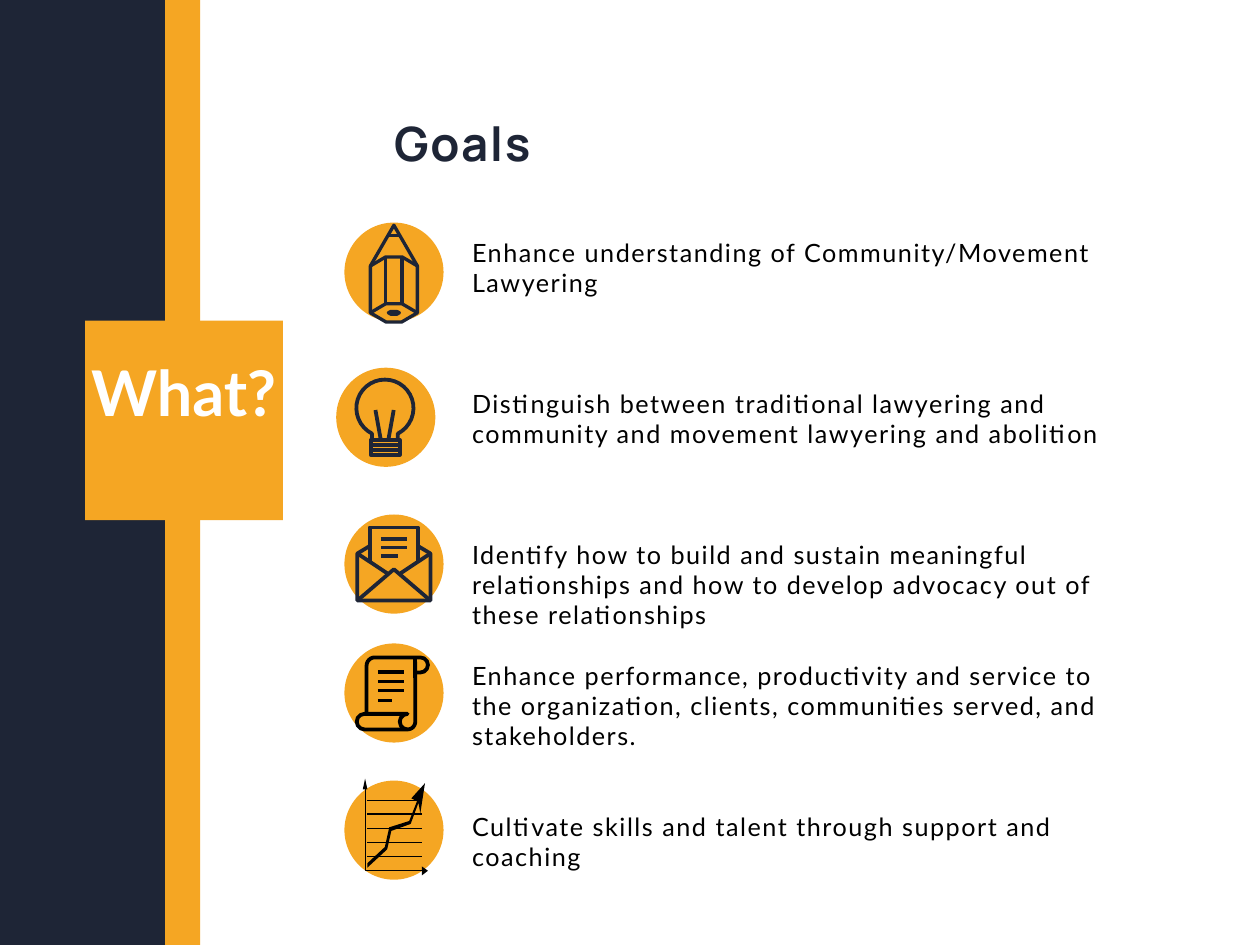
from math import cos, radians, sin

from lxml import etree
from pptx import Presentation
from pptx.dml.color import RGBColor
from pptx.enum.shapes import MSO_SHAPE
from pptx.enum.text import MSO_ANCHOR, MSO_AUTO_SIZE, PP_ALIGN
from pptx.oxml.ns import qn
from pptx.util import Pt

RECT, OVAL = MSO_SHAPE.RECTANGLE, MSO_SHAPE.OVAL
TOP, NO_FIT = MSO_ANCHOR.TOP, MSO_AUTO_SIZE.NONE
LEFT, CENTER = PP_ALIGN.LEFT, PP_ALIGN.CENTER
NAVY, GOLD, BLACK, WHITE = "1E2536", "F5A623", "000000", "FFFFFF"
LINE = 14.4      # line pitch of the goals
DISC = 47.2      # diameter of the icon discs


def arc(cx, cy, radius, start, end, steps=6):
    """Points on a circle, angles in degrees, clockwise from the right."""
    angles = [radians(start + (end - start) * i / steps) for i in range(steps + 1)]
    return [(cx + radius * cos(a), cy + radius * sin(a)) for a in angles]


def rows(left, ys, rights):
    """Horizontal strokes that share a left end."""
    return [[(left, y), (right, y)] for y, right in zip(ys, rights)]


# ---- content ----
# goal, blank lines before it
GOALS = [
    ("Enhance understanding of Community/Movement Lawyering", 0),
    ("Distinguish between traditional lawyering and community and movement "
     "lawyering and abolition", 3),
    ("Identify how to build and sustain meaningful relationships and how to "
     "develop advocacy out of these relationships", 3),
    ("Enhance performance, productivity and service to the organization, "
     "clients, communities served, and stakeholders.", 1),
    ("Cultivate skills and talent through support and coaching", 2),
]
# left, top, width, height, colour
PANELS = [
    (78, 0, 17.3, 450, GOLD),
    (0, 0, 78.5, 450, NAVY),
    (40.6, 152.7, 94.2, 95, GOLD),
]
TITLE = dict(size=Pt(22.5), name="Manrope", bold=True)
GOAL = dict(size=Pt(12), name="Lato", bold=False)
LABEL = dict(size=Pt(30), name="Lato", bold=True)

# ---- icon outlines, in points from the disc centre ----
PENCIL = [
    [(0, -22.3), (11.2, -2.9), (11.2, 19.4), (3.7, 23.8), (-3.7, 23.8),
     (-11.2, 19.4), (-11.2, -2.9), (0, -22.3)],
    [(-11.2, -2.9), (-3.9, -7.2), (3.9, -7.2), (11.2, -2.9)],
    [(-11.2, 19.4), (-3.9, 15.1), (3.9, 15.1), (11.2, 19.4)],
    [(-3.9, -7.2), (-3.9, 15.1)],
    [(3.9, -7.2), (3.9, 15.1)],
    [(-3, -17.3), (3, -17.3)],
    [(-2.6, 19.4), (-1.4, 18.8), (1.4, 18.8), (2.6, 19.4), (1.4, 20.1),
     (-1.4, 20.1), (-2.6, 19.4)],
]
BULB = [
    [(-6.5, 10.9), *arc(-0.4, -4.3, 13.6, 117, 423, 30), (5.7, 10.9)],
    [(-7.2, 10.9), (6.6, 10.9), (6.6, 18), (-7.2, 18), (-7.2, 10.9)],
    *rows(-7.2, (13.3, 15.6), (6.6, 6.6)),
    [(-4.9, -3.4), (-2.4, 10.5)],
    [(3.8, -3.4), (1.3, 10.5)],
]
ENVELOPE = [
    [(-11.4, -8.6), (-17.4, -5), (-17.4, 17.4), (17.4, 17.4), (17.4, -5), (11.4, -8.6)],
    [(-11.4, -1.5), (-11.4, -17.4), (11.4, -17.4), (11.4, -1.5)],
    [(-17.4, -5), (-3.2, 4.4)],
    [(17.4, -5), (3.2, 4.4)],
    [(-17.4, 17.4), (0, 2.5), (17.4, 17.4)],
    *rows(-6.2, (-11.9, -7.9, -3.6), (6.2, 6.2, 2.2)),
]
SCROLL = [
    [(-13, 10), *arc(-9.1, -13, 3.9, 180, 270), *arc(12.6, -13.3, 3.6, -90, 90),
     (10.1, -9.7)],
    [(10.1, -16.9), *arc(6.5, 13.7, 3.7, 0, 90), *arc(-14, 13.7, 3.7, 90, 270),
     *arc(6.5, 13.7, 3.7, 270, 90)],
    *rows(-7.6, (-10.1, -5.4, -1.1, 3.6), (4.7, 4.7, 4.7, -1)),
]
GRAPH_GRID = [
    [(-13.7, -20), (-13.7, 19.4), (14, 19.4)],
    *rows(-12.6, (-14, -7.6, -0.7, 5.8, 12.6), [13.3] * 5),
]
GRAPH_ARROWS = [
    [(-12.6, 15.8), (-4.3, 8.1), (-2.2, -1.3), (7.3, -4.3), (11, -13.7), (8.3, -15.1),
     (14.8, -22.3), (12.6, -7.9), (11.7, -13), (8, -2.9), (-1.2, 0.4), (-3.2, 9.2),
     (-12.6, 17.9), (-12.6, 15.8)],
    [(-14.8, -19.4), (-13.7, -24.5), (-12.6, -19.4), (-14.8, -19.4)],
    [(13.3, 17.3), (16.2, 19.4), (13.3, 21.6), (13.3, 17.3)],
]
# disc centre, colour, layers as (outlines, line weight or None for a filled layer)
ICONS = [
    ((187.6, 129.6), NAVY, [(PENCIL, 1.6)]),
    ((183.7, 198.7), NAVY, [(BULB, 1.8)]),
    ((187.6, 268.6), NAVY, [(ENVELOPE, 1.8)]),
    ((187.6, 330), BLACK, [(SCROLL, 1.8)]),
    ((187.6, 395.3), BLACK, [(GRAPH_GRID, 0.6), (GRAPH_ARROWS, None)]),
]


# ---- helpers ----
def rgb(hex_value):
    return RGBColor.from_string(hex_value)


def paint(sp, color, weight=None):
    """Fill a shape, or only stroke it when a weight is given."""
    sp.shadow.inherit = False
    if weight:
        sp.fill.background()
        sp.line.color.rgb = rgb(color)
        sp.line.width = Pt(weight)
    else:
        sp.fill.solid()
        sp.fill.fore_color.rgb = rgb(color)
        sp.line.fill.background()


def draw(s, contours, centre):
    """One freeform of several contours, held to a hundredth of a point."""
    placed = [[((centre[0] + x) * 100, (centre[1] + y) * 100) for x, y in points]
              for points in contours]
    builder = s.shapes.build_freeform(*placed[0][0], scale=Pt(1) / 100)
    for i, points in enumerate(placed):
        if i:
            builder.move_to(*points[0])
        builder.add_line_segments(points[1:], close=points[0] == points[-1])
    return builder.convert_to_shape()


def write(sp, box, inset, items, font, color, pitch, align=LEFT, spacing=0):
    """Place a text shape and fill it with (text, blank lines before) items."""
    sp.left, sp.top, sp.width, sp.height = map(Pt, box)
    tf = sp.text_frame
    frame = dict(word_wrap=True, auto_size=NO_FIT, vertical_anchor=TOP, margin_left=0,
                 margin_right=0, margin_top=Pt(inset), margin_bottom=0)
    for key, value in frame.items():
        setattr(tf, key, value)
    for i, (text, gap) in enumerate(items):
        p = tf.add_paragraph() if i else tf.paragraphs[0]
        layout = dict(alignment=align, line_spacing=Pt(pitch),
                      space_before=Pt(gap * pitch), space_after=Pt(0))
        for key, value in layout.items():
            setattr(p, key, value)
        pPr = p._p.get_or_add_pPr()
        pPr.set("marL", "0")
        pPr.set("indent", "0")
        etree.SubElement(pPr, qn("a:buNone"))
        r = p.add_run()
        r.text = text
        for key, value in font.items():
            setattr(r.font, key, value)
        r.font.color.rgb = rgb(color)
        r._r.get_or_add_rPr().set("spc", str(spacing))


def main():
    prs = Presentation()
    prs.slide_width, prs.slide_height = Pt(600), Pt(450)
    s = prs.slides.add_slide(prs.slide_layouts[1])

    # Title and goals
    write(s.shapes.title, (187.7, 56.2, 183, 22.5), 2.9, [("Goals", 0)],
          TITLE, NAVY, 22.5, spacing=75)
    write(s.placeholders[1], (224.8, 111.4, 319, 313), 1.4, GOALS,
          GOAL, BLACK, LINE, spacing=75)

    # Icons on their discs
    for centre, color, layers in ICONS:
        corner = [Pt(c - DISC / 2) for c in centre]
        paint(s.shapes.add_shape(OVAL, *corner, Pt(DISC), Pt(DISC)), GOLD)
        for contours, weight in layers:
            paint(draw(s, contours, centre), color, weight)

    # Side panels and label
    for *box, color in PANELS:
        paint(s.shapes.add_shape(RECT, *map(Pt, box)), color)
    label = s.shapes.add_textbox(0, 0, 0, 0)
    write(label, (43.2, 170.7, 88.6, 60), 3.6, [("What?", 0)], LABEL, WHITE, 30, CENTER)

    prs.save("out.pptx")


if __name__ == "__main__":
    main()
